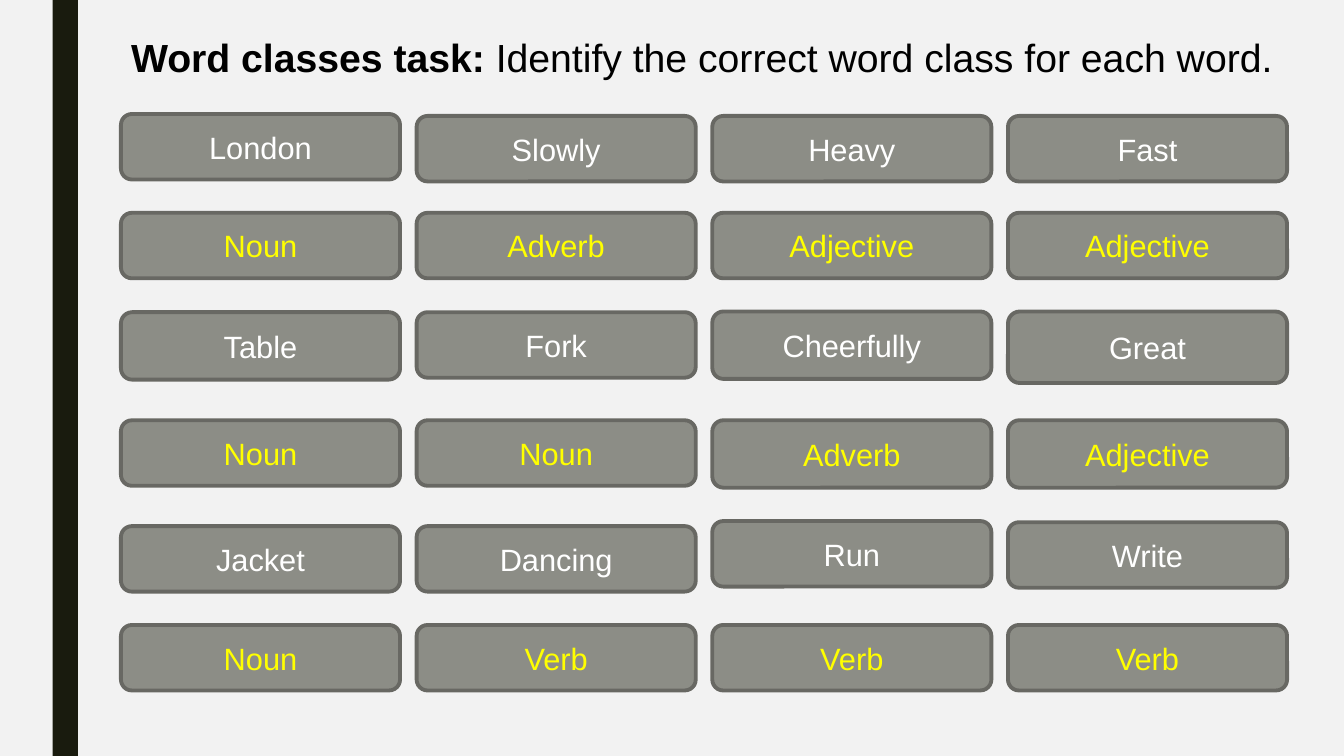
import pptx
import pptx.util
import pptx.dml.color
import pptx.enum.shapes
import pptx.enum.text

Pt = pptx.util.Pt
RGB = pptx.dml.color.RGBColor
KIND = pptx.enum.shapes.MSO_SHAPE
ALIGN = pptx.enum.text.PP_ALIGN
ANCHOR = pptx.enum.text.MSO_ANCHOR

TITLE = [
    ("Word classes task:", True),
    (" Identify the correct word class for each word.", False),
]
ROWS = [
    (["London", "Slowly", "Heavy", "Fast"], [81.4, 82.8, 82.8, 82.8], [46.8] * 4),
    (["Noun", "Adverb", "Adjective", "Adjective"], [152] * 4, [46.8] * 4),
    (["Table", "Fork", "Cheerfully", "Great"], [223, 223, 222.5, 222.5], [48.2, 46.8, 48.2, 51.1]),
    (["Noun", "Noun", "Adverb", "Adjective"], [300.2] * 4, [46.8, 46.8, 48.2, 48.2]),
    (["Jacket", "Dancing", "Run", "Write"], [375.8, 375.8, 372.2, 373], [46.8] * 4),
    (["Noun", "Verb", "Verb", "Verb"], [446.4] * 4, [46.8] * 4),
]

BACK = RGB(0xF2, 0xF2, 0xF2)
DARK = RGB(0x19, 0x1B, 0x0E)
GREY = RGB(0x8C, 0x8D, 0x86)
EDGE = RGB(0x68, 0x68, 0x63)
WHITE = RGB(0xFF, 0xFF, 0xFF)
YELLOW = RGB(0xFF, 0xFF, 0x00)
BLACK = RGB(0, 0, 0)

LEFT, STEP, WIDTH = 86.4, 211.2, 199.4
FRAME = {"word_wrap": True, "vertical_anchor": ANCHOR.MIDDLE}
HEAD = {
    "word_wrap": True,
    "vertical_anchor": ANCHOR.TOP,
    "auto_size": pptx.enum.text.MSO_AUTO_SIZE.NONE,
}


def apply(item, values):
    for name, value in values.items():
        setattr(item, name, value)


def write(para, text, size, color, bold):
    run = para.add_run()
    run.text = text
    apply(run.font, {"name": "Arial", "size": Pt(size), "bold": bold})
    run.font.color.rgb = color


def draw(slide, kind, box, fill):
    shape = slide.shapes.add_shape(kind, *map(Pt, box))
    shape.shadow.inherit = False
    shape.fill.solid()
    shape.fill.fore_color.rgb = fill
    return shape


def card(slide, word, box, color):
    shape = draw(slide, KIND.ROUNDED_RECTANGLE, box, GREY)
    shape.line.color.rgb = EDGE
    shape.line.width = Pt(2.75)
    apply(shape.text_frame, FRAME)
    para = shape.text_frame.paragraphs[0]
    para.alignment = ALIGN.CENTER
    write(para, word, 22, color, False)


def main():
    deck = pptx.Presentation()
    apply(deck, {"slide_width": Pt(960), "slide_height": Pt(540)})
    slide = deck.slides.add_slide(deck.slide_layouts[5])
    slide.background.fill.solid()
    slide.background.fill.fore_color.rgb = BACK

    bar = draw(slide, KIND.RECTANGLE, (37.6, 0, 18, 540), DARK)
    bar.line.fill.background()

    title = slide.shapes.title
    apply(title, {"left": Pt(86.4), "top": Pt(20.2), "width": Pt(862.6), "height": Pt(41)})
    apply(title.text_frame, HEAD)
    para = title.text_frame.paragraphs[0]
    para.alignment = ALIGN.LEFT
    for text, bold in TITLE:
        write(para, text, 28, BLACK, bold)

    for row, (words, tops, highs) in enumerate(ROWS):
        color = YELLOW if row % 2 else WHITE
        for col, (word, top, high) in enumerate(zip(words, tops, highs)):
            card(slide, word, (LEFT + col * STEP, top, WIDTH, high), color)

    deck.save("out.pptx")


if __name__ == "__main__":
    main()
